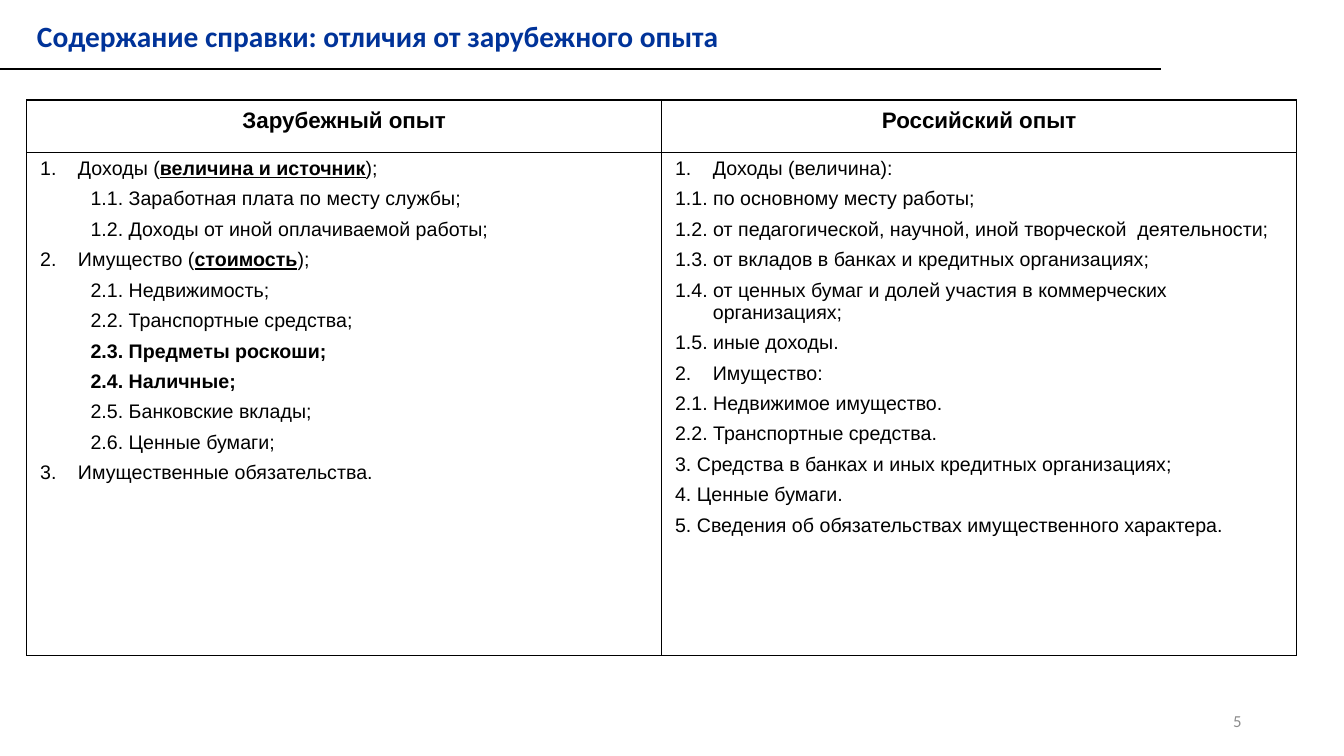
"""Builds a slide comparing foreign and Russian income declarations."""
from lxml import etree
from pptx import Presentation
from pptx import util as u
from pptx.dml.color import RGBColor
from pptx.enum import shapes, text
from pptx.oxml.ns import qn

Pt = u.Pt
COLORS = {"ink": "000000", "title": "003399", "number": "8C8C8C", "paper": "FFFFFF"}
PLAIN = {"bold": False, "underline": False}
BOLD = {"bold": True, "underline": False}
STRESSED = {"bold": True, "underline": True}
HANG = Pt(27)
HEADINGS = ["Зарубежный опыт", "Российский опыт"]

FOREIGN = [
    ("numbered", [("Доходы (", PLAIN), ("величина и источник", STRESSED), (");", PLAIN)]),
    ("nested", [("1.1. Заработная плата по месту службы;", PLAIN)]),
    ("nested", [("1.2. Доходы от иной оплачиваемой работы;", PLAIN)]),
    ("numbered", [("Имущество (", PLAIN), ("стоимость", STRESSED), (");", PLAIN)]),
    ("nested", [("2.1. Недвижимость;", PLAIN)]),
    ("nested", [("2.2. Транспортные средства;", PLAIN)]),
    ("nested", [("2.3. Предметы роскоши;", BOLD)]),
    ("nested", [("2.4. Наличные;", BOLD)]),
    ("nested", [("2.5. Банковские вклады;", PLAIN)]),
    ("nested", [("2.6. Ценные бумаги;", PLAIN)]),
    ("numbered", [("Имущественные обязательства.", PLAIN)]),
]
RUSSIAN = [
    ("numbered", [("Доходы (величина):", PLAIN)]),
    ("flat", [("1.1. по основному месту работы;", PLAIN)]),
    ("flat", [("1.2. от педагогической, научной, иной творческой  деятельности;", PLAIN)]),
    ("flat", [("1.3. от вкладов в банках и кредитных организациях;", PLAIN)]),
    ("flat", [("1.4. от ценных бумаг и долей участия в коммерческих организациях;", PLAIN)]),
    ("flat", [("1.5. иные доходы.", PLAIN)]),
    ("from two", [("Имущество:", PLAIN)]),
    ("flat", [("2.1. Недвижимое имущество.", PLAIN)]),
    ("flat", [("2.2. Транспортные средства.", PLAIN)]),
    ("flat", [("3. Средства в банках и иных кредитных организациях;", PLAIN)]),
    ("flat", [("4. Ценные бумаги.", PLAIN)]),
    ("flat", [("5. Сведения об обязательствах имущественного характера.", PLAIN)]),
]
NUMBERING = {"numbered": {}, "from two": {"startAt": "2"}}


def apply(target, values):
    """Set every attribute listed in values on target."""
    for name, value in values.items():
        setattr(target, name, value)


def add_run(paragraph, wording, color, values):
    """Append a formatted run to a paragraph."""
    run = paragraph.add_run()
    run.text = wording
    apply(run.font, values)
    run.font.color.rgb = RGBColor.from_string(COLORS[color])


def format_cell(cell):
    """Give a cell its margins, fill and thin black borders."""
    apply(cell, {"margin_left": Pt(9.5), "margin_right": Pt(9.5),
                 "margin_top": Pt(3.6), "margin_bottom": Pt(3.6),
                 "vertical_anchor": text.MSO_ANCHOR.TOP})
    cell.fill.solid()
    cell.fill.fore_color.rgb = RGBColor.from_string(COLORS["paper"])
    properties = cell._tc.get_or_add_tcPr()
    for place, side in enumerate(("lnL", "lnR", "lnT", "lnB")):
        border = etree.Element(qn(f"a:{side}"), w=str(Pt(1)))
        paint = etree.SubElement(border, qn("a:solidFill"))
        etree.SubElement(paint, qn("a:srgbClr"), val=COLORS["ink"])
        properties.insert(place, border)


def fill_heading(cell, wording):
    """Write a centred column heading."""
    paragraph = cell.text_frame.paragraphs[0]
    apply(paragraph, {"alignment": text.PP_ALIGN.CENTER, "line_spacing": 1.14,
                      "space_after": Pt(6)})
    add_run(paragraph, wording, "ink", {"name": "Arial", "size": Pt(16), "bold": True})


def fill_list(cell, items):
    """Write the declaration items with hanging indents and numbering."""
    frame = cell.text_frame
    for position, (kind, runs) in enumerate(items):
        paragraph = frame.add_paragraph() if position else frame.paragraphs[0]
        nested = kind == "nested"
        apply(paragraph, {"level": int(nested), "space_after": Pt(6)})
        properties = paragraph._p.get_or_add_pPr()
        properties.set("marL", str(HANG + (Pt(36) if nested else 0)))
        properties.set("indent", str(-HANG))
        if kind in NUMBERING:
            etree.SubElement(properties, qn("a:buAutoNum"), type="arabicPeriod",
                             **NUMBERING[kind])
        for wording, weight in runs:
            add_run(paragraph, wording, "ink", {"name": "Arial", "size": Pt(14), **weight})


def add_comparison(slide):
    """Add the two-column comparison table."""
    comparison = slide.shapes.add_table(2, 2, Pt(19.2), Pt(71.5), Pt(907), Pt(396.5)).table
    apply(comparison, {"first_row": False, "horz_banding": False})
    for row, height in zip(comparison.rows, (37.5, 359)):
        row.height = Pt(height)
    for column, (heading, items) in enumerate(zip(HEADINGS, (FOREIGN, RUSSIAN))):
        comparison.columns[column].width = Pt(453.5)
        for row in range(2):
            format_cell(comparison.cell(row, column))
        fill_heading(comparison.cell(0, column), heading)
        fill_list(comparison.cell(1, column), items)


def set_title(slide, wording):
    """Place and format the slide title."""
    title = slide.shapes.title
    apply(title, {"left": Pt(19.2), "top": Pt(9.5), "width": Pt(505.5), "height": Pt(32.5)})
    apply(title.text_frame, {"word_wrap": False, "vertical_anchor": text.MSO_ANCHOR.TOP,
                             "auto_size": text.MSO_AUTO_SIZE.SHAPE_TO_FIT_TEXT})
    paragraph = title.text_frame.paragraphs[0]
    paragraph.alignment = text.PP_ALIGN.LEFT
    add_run(paragraph, wording, "title", {"name": "Calibri", "size": Pt(21), "bold": True})


def add_title_rule(slide):
    """Draw the line under the title."""
    rule = slide.shapes.add_connector(shapes.MSO_CONNECTOR.STRAIGHT,
                                      Pt(0), Pt(49), Pt(829.5), Pt(49))
    rule.line.width = Pt(1.5)
    rule.line.color.rgb = RGBColor.from_string(COLORS["ink"])
    etree.SubElement(rule._element.spPr, qn("a:effectLst"))


def add_page_number(slide, number):
    """Write the page number in the lower right corner."""
    page = slide.shapes.add_textbox(Pt(678), Pt(500.5), Pt(216), Pt(28.75))
    apply(page.text_frame, {"word_wrap": True, "vertical_anchor": text.MSO_ANCHOR.MIDDLE})
    paragraph = page.text_frame.paragraphs[0]
    paragraph.alignment = text.PP_ALIGN.RIGHT
    add_run(paragraph, number, "number", {"name": "Calibri", "size": Pt(12)})


def main():
    """Build and save the slide."""
    deck = Presentation()
    apply(deck, {"slide_width": Pt(960), "slide_height": Pt(540)})
    slide = deck.slides.add_slide(deck.slide_layouts[5])
    add_page_number(slide, "5")
    add_comparison(slide)
    set_title(slide, "Содержание справки: отличия от зарубежного опыта")
    add_title_rule(slide)
    deck.save("out.pptx")


if __name__ == "__main__":
    main()
